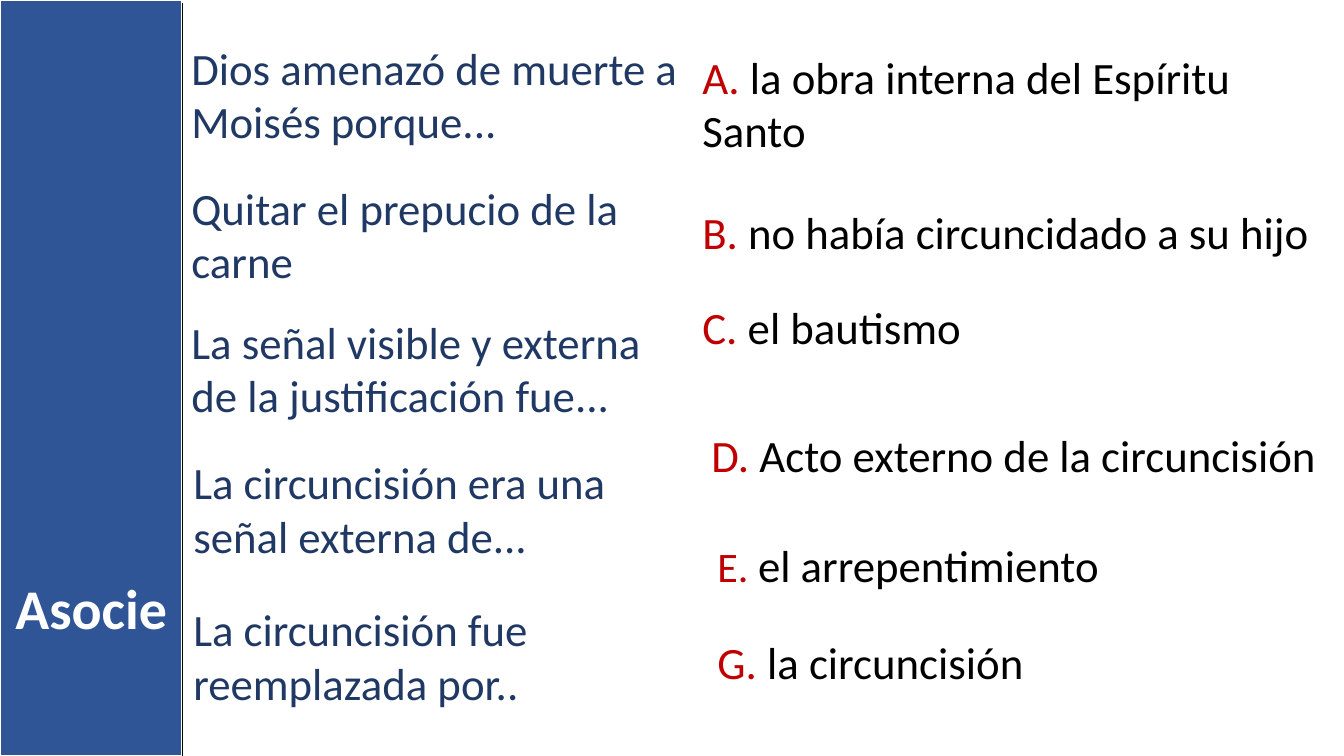
import pptx
import pptx.util
import pptx.dml.color
import pptx.enum.shapes
import pptx.enum.text
import pptx.oxml.ns
from lxml import etree

Pt = pptx.util.Pt
COLORS = {"band": "2F5597", "prompt": "203864", "letter": "C00000",
          "black": "000000", "white": "FFFFFF"}


def rgb(name):
    return pptx.dml.color.RGBColor.from_string(COLORS[name])


def add_text(runs, left, top, width, height, bold=None, align=None):
    """Add a wrapped text box; runs is a list of (text, color name, size)."""
    tf = s.shapes.add_textbox(Pt(left), Pt(top), Pt(width), Pt(height)).text_frame
    tf.word_wrap = True
    tf.auto_size = pptx.enum.text.MSO_AUTO_SIZE.SHAPE_TO_FIT_TEXT
    p = tf.paragraphs[0]
    p.alignment = align
    for text, color, size in runs:
        r = p.add_run()
        r.text = text
        r.font.name = "Calibri"
        r.font.size = Pt(size)
        r.font.bold = bold
        r.font.color.rgb = rgb(color)


prs = pptx.Presentation()
prs.slide_width, prs.slide_height = Pt(960), Pt(540)
s = prs.slides.add_slide(prs.slide_layouts[6])

# Side band
band_width = 130.3
sp = s.shapes.add_shape(pptx.enum.shapes.MSO_SHAPE.RECTANGLE, 0, 0, Pt(band_width), Pt(540))
sp.shadow.inherit = False
sp.fill.solid()
sp.fill.fore_color.rgb = rgb("band")
sp.line.color.rgb = rgb("white")
sp.line.width = Pt(1.5)

# Prompts: text, left, top, width
prompts = [
    ("Dios amenazó de muerte a Moisés porque...", 129.6, 25.2, 363),
    ("Quitar el prepucio de la carne", 129.6, 125.3, 332.6),
    ("La señal visible y externa de la justificación fue...", 129.6, 221, 349.2),
    ("La circuncisión era una señal externa de...", 131, 321.1, 331.2),
    ("La circuncisión fue reemplazada por..", 131, 426.2, 317.5),
]
for text, left, top, width in prompts:
    add_text([(text, "prompt", 32)], left, top, width, 85)

# Answers: letter, letter size, text, left, top, width, height
answers = [
    ("A. ", 32, "la obra interna del Espíritu Santo", 494.6, 31.7, 453.6, 85),
    ("B. ", 32, "no había circuncidado a su hijo", 494.6, 142.6, 465.4, 46),
    ("C. ", 32, "el bautismo", 494.6, 210.2, 430.6, 46),
    ("D. ", 32, "Acto externo de la circuncisión", 501.1, 301.7, 458.9, 46),
    ("E. ", 30, "el arrepentimiento", 505.4, 380.2, 414, 46),
    ("G. ", 32, "la circuncisión", 505.4, 450, 419, 46),
]
for letter, size, text, left, top, width, height in answers:
    add_text([(letter, "letter", size), (text, "black", 32)], left, top, width, height)

add_text([("Asocie", "white", 40)], 0, 406.1, band_width, 55.4,
         bold=True, align=pptx.enum.text.PP_ALIGN.CENTER)

# Edge line of the band
edge = s.shapes.add_connector(pptx.enum.shapes.MSO_CONNECTOR.STRAIGHT,
                              Pt(band_width), Pt(2.2), Pt(band_width), Pt(540))
edge.line.color.rgb = rgb("black")
edge.line.width = Pt(1)
etree.SubElement(edge._element.spPr, pptx.oxml.ns.qn("a:effectLst"))

prs.save("out.pptx")
